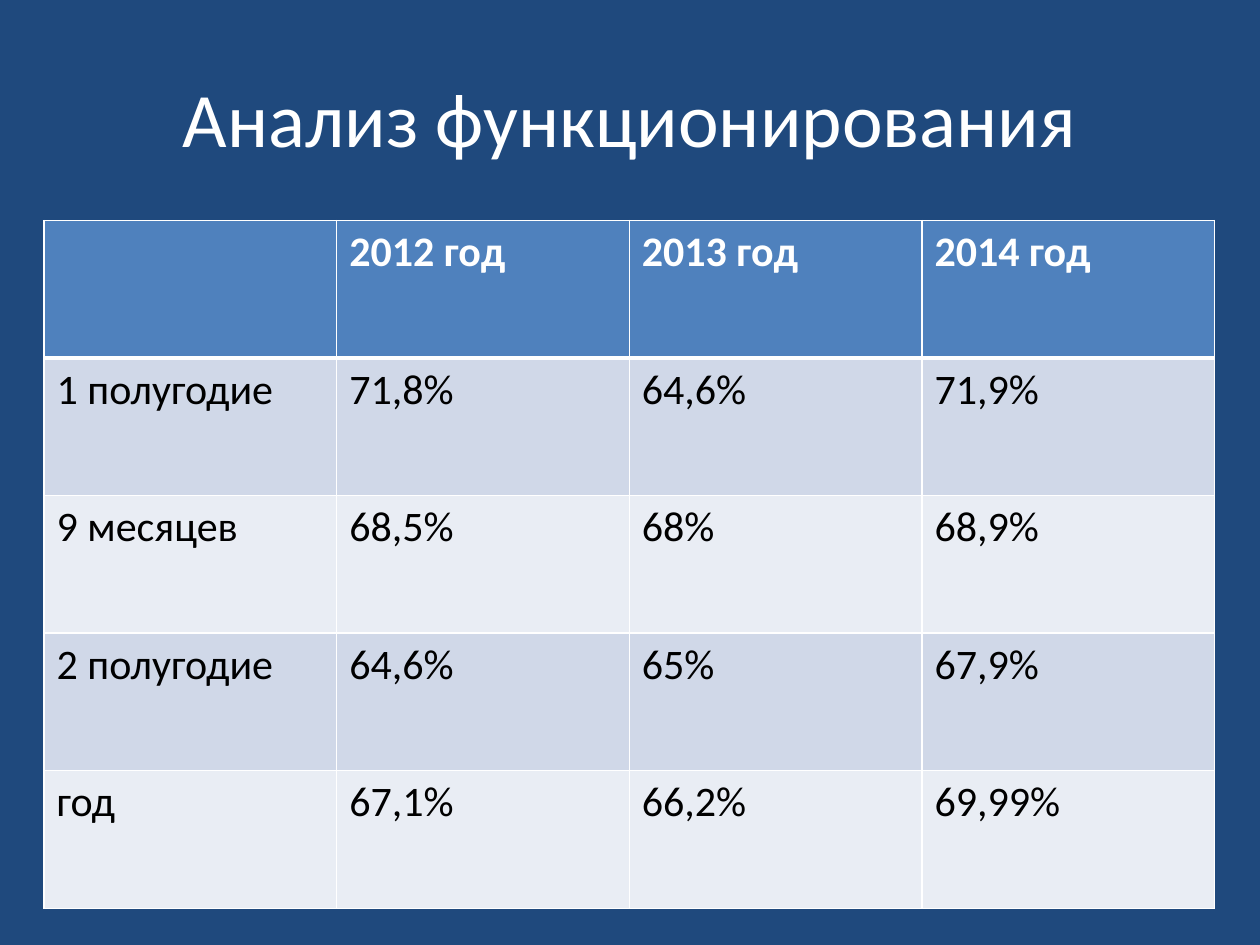
from lxml.etree import SubElement
from pptx import Presentation
from pptx.dml.color import RGBColor
from pptx.enum.text import MSO_ANCHOR, PP_ALIGN
from pptx.oxml.ns import qn
from pptx.util import Inches, Pt

NAVY = RGBColor(0x1F, 0x49, 0x7D)
BLUE = RGBColor(0x4F, 0x81, 0xBD)
BAND_DARK = RGBColor(0xD0, 0xD8, 0xE8)
BAND_LIGHT = RGBColor(0xE9, 0xED, 0xF4)
WHITE = RGBColor(0xFF, 0xFF, 0xFF)
BLACK = RGBColor(0x00, 0x00, 0x00)
FONT = "Calibri"

ROWS = [
    ["", "2012 год", "2013 год", "2014 год"],
    ["1 полугодие", "71,8%", "64,6%", "71,9%"],
    ["9 месяцев", "68,5%", "68%", "68,9%"],
    ["2 полугодие", "64,6%", "65%", "67,9%"],
    ["год", "67,1%", "66,2%", "69,99%"],
]


def add_run(p, text, size, color, bold=False):
    r = p.add_run()
    r.text = text
    r.font.name = FONT
    r.font.size = Pt(size)
    r.font.bold = bold
    r.font.color.rgb = color


def set_borders(cell, top, bottom):
    """Draw white cell borders; must run before the cell gets its fill."""
    tc_pr = cell._tc.get_or_add_tcPr()
    for side, width in (("L", 1), ("R", 1), ("T", top), ("B", bottom)):
        ln = SubElement(tc_pr, qn(f"a:ln{side}"), w=str(Pt(width)))
        fill = SubElement(ln, qn("a:solidFill"))
        SubElement(fill, qn("a:srgbClr"), val=str(WHITE))


def place_title(s, text, left, top, width, height):
    sp = s.shapes.title
    sp.left, sp.top, sp.width, sp.height = left, top, width, height
    tf = sp.text_frame
    tf.word_wrap = True
    tf.vertical_anchor = MSO_ANCHOR.MIDDLE
    p = tf.paragraphs[0]
    p.alignment = PP_ALIGN.CENTER
    add_run(p, text, 44, WHITE)


def place_table(s, rows, left, top, width, height):
    table = s.shapes.add_table(len(rows), len(rows[0]), left, top, width, height).table
    for i, values in enumerate(rows):
        header = i == 0
        band = BLUE if header else (BAND_LIGHT, BAND_DARK)[i % 2]
        for j, value in enumerate(values):
            cell = table.cell(i, j)
            set_borders(cell, top=3 if i == 1 else 1, bottom=3 if header else 1)
            cell.fill.solid()
            cell.fill.fore_color.rgb = band
            if value:
                add_run(cell.text_frame.paragraphs[0], value, 24,
                        WHITE if header else BLACK, bold=header)


def main():
    prs = Presentation()
    prs.slide_width, prs.slide_height = Inches(10), Inches(7.5)
    s = prs.slides.add_slide(prs.slide_layouts[5])
    s.background.fill.solid()
    s.background.fill.fore_color.rgb = NAVY
    place_title(s, "Анализ функционирования",
                Inches(0.5), Inches(0.3), Inches(9), Inches(1.25))
    place_table(s, ROWS, Inches(0.35), Inches(1.75), Inches(9.29), Inches(5.46))
    prs.save("out.pptx")


if __name__ == "__main__":
    main()
